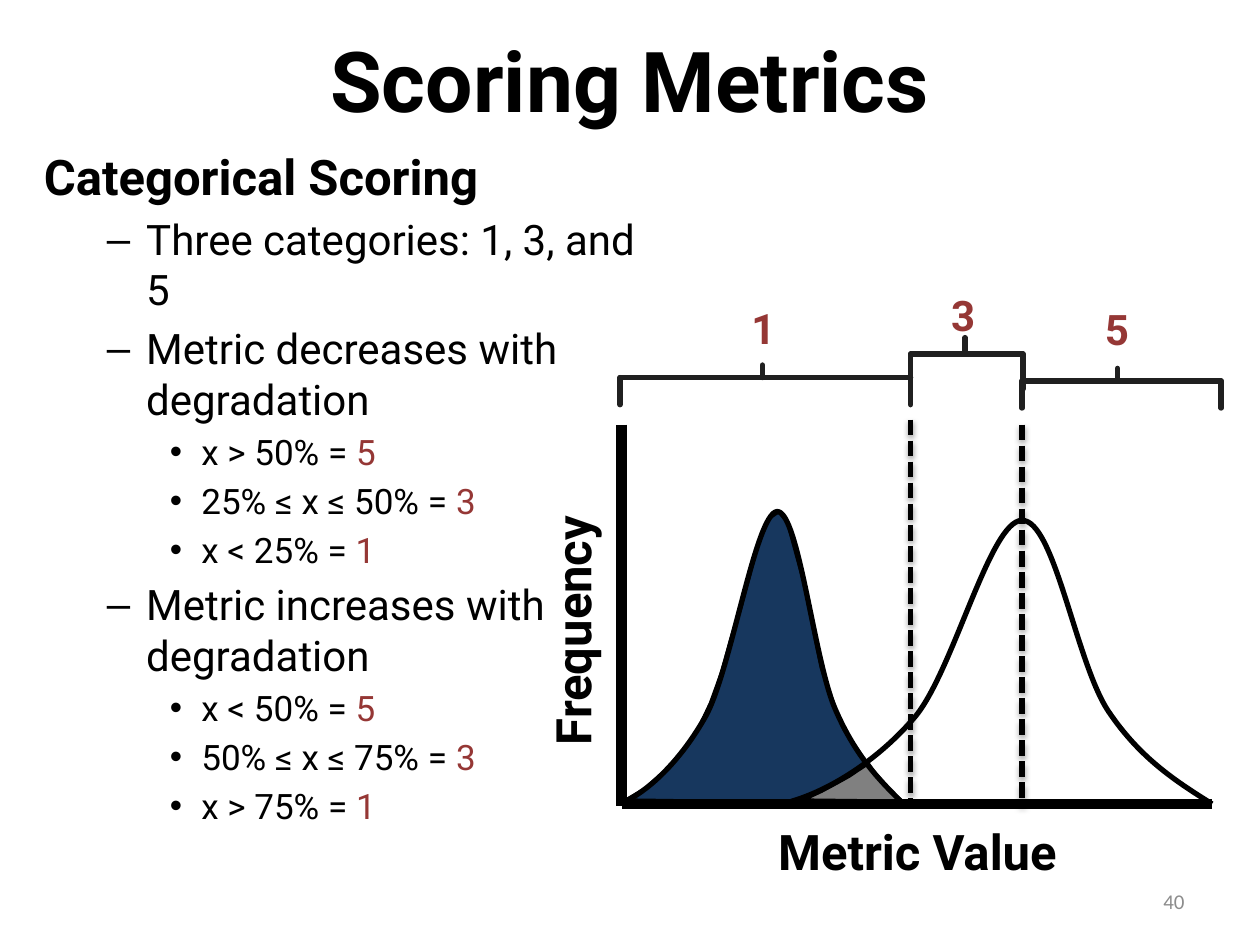
"""Build the Scoring Metrics slide with its two frequency curves."""
from dataclasses import dataclass
from typing import Optional

from lxml import etree
from pptx import Presentation
from pptx import util as u
from pptx.dml.color import RGBColor
from pptx.enum import dml, shapes, text
from pptx.oxml import ns

BLACK = RGBColor(0x00, 0x00, 0x00)
RED = RGBColor(0x95, 0x37, 0x35)
NAVY = RGBColor(0x17, 0x37, 0x5E)
GRAY = RGBColor(0x80, 0x80, 0x80)
CHARCOAL = RGBColor(0x20, 0x20, 0x20)
PALE = RGBColor(0x8C, 0x8C, 0x8C)


@dataclass
class Label:
    text: str
    left: float
    top: float
    width: float
    height: float
    size: float
    color: RGBColor = BLACK
    bold: bool = True
    font: str = "Roboto"
    align: text.PP_ALIGN = text.PP_ALIGN.CENTER
    anchor: text.MSO_ANCHOR = text.MSO_ANCHOR.TOP
    rotation: float = 0


@dataclass
class Bracket:
    left: float
    right: float
    top: float
    drop: float
    tick_x: float
    tick: float


@dataclass
class Level:
    size: float
    indent: float
    hanging: float
    bullet: str


@dataclass
class Item:
    level: int
    text: str
    score: str = ""


LEVELS = [Level(28, 0, 0, ""), Level(24, 58.5, 22.5, "–"), Level(20, 90, 18, "•")]
ITEMS = [
    Item(0, "Categorical Scoring"),
    Item(1, "Three categories: 1, 3, and 5"),
    Item(1, "Metric decreases with degradation"),
    Item(2, "x > 50% = ", "5"),
    Item(2, "25% ≤ x ≤ 50% = ", "3"),
    Item(2, "x < 25% = ", "1"),
    Item(1, "Metric increases with degradation"),
    Item(2, "x < 50% = ", "5"),
    Item(2, "50% ≤ x ≤ 75% = ", "3"),
    Item(2, "x > 75% = ", "1"),
]
LABELS = [
    Label("Scoring Metrics", 36, 0, 648, 90, 48, anchor=text.MSO_ANCHOR.MIDDLE),
    Label("Frequency", 223.2, 339.8, 207.4, 41, 28, rotation=270),
    Label("Metric Value", 355.7, 465.8, 337, 44, 28),
    Label("1", 399.6, 169.2, 73.4, 36, 24, RED),
    Label("3", 516.2, 162, 68.4, 36, 24, RED),
    Label("5", 604.1, 169.9, 68.4, 36, 24, RED),
    Label("40", 516.2, 500.4, 167.8, 28.8, 12, PALE, False, "Calibri",
          text.PP_ALIGN.RIGHT, text.MSO_ANCHOR.MIDDLE),
]
BRACKETS = [
    Bracket(354.3, 520.4, 215.8, 15.5, 435.6, 7.2),
    Bracket(584, 697.8, 217.7, 15.5, 638.6, 7.2),
    Bracket(520.4, 584.6, 202.3, 20, 551.5, 9.4),
]
LEFT_CURVE = [
    (355.7, 458.6), (369.4, 452.9), (388.8, 435.6), (403.9, 408.2),
    (418.3, 380.2), (432, 293), (444.2, 292.3),
    (456.5, 292.3), (465.1, 377.3), (477.4, 405.4),
    (489.6, 433.4), (503.3, 446.4), (517, 460.1),
]
RIGHT_CURVE = [
    (452.2, 457.9), (472.3, 452.2), (501.1, 435.6), (523.4, 409),
    (545, 382.3), (565.9, 297.4), (583.9, 297.4),
    (602.6, 296.6), (614.9, 379.4), (633.6, 406.8),
    (651.6, 433.4), (671.8, 446.4), (692.6, 459.4),
]
PEAK = [
    (357.8, 457.2), (516.2, 459.4), (511.2, 455), (501.8, 445), (492.5, 432),
    (482.4, 416.9), (477.4, 405.4), (469.4, 381.6), (464.4, 357.1), (460.1, 334.8),
    (454.3, 313.9), (450, 298.1), (445, 292.3), (439.9, 295.9), (435.6, 304.6),
    (431.3, 317.5), (427.7, 331.2), (423.4, 347), (417.6, 365.8), (412.6, 383.8),
    (406.1, 401.8), (400.3, 414), (393.8, 424.8), (380.9, 439.9), (368.6, 450.7),
]
OVERLAP = [
    (455, 457.2), (515.5, 457.9), (508.3, 451.4), (504.7, 447.1),
    (499.7, 441.4), (496.1, 436.3), (489.6, 440.6), (485.3, 443.5),
    (478.8, 447.1), (469.4, 452.2), (460.1, 456.5),
]


def draw_outline(s, points: list, width: float, fill: Optional[RGBColor] = None):
    """Draw a polyline, closed and filled when a fill is given."""
    (x, y), *rest = [(u.Pt(px), u.Pt(py)) for px, py in points]
    builder = s.shapes.build_freeform(x, y)
    builder.add_line_segments(rest, close=fill is not None)
    sp = builder.convert_to_shape()
    sp.shadow.inherit = False
    if fill is None:
        sp.fill.background()
    else:
        sp.fill.solid()
        sp.fill.fore_color.rgb = fill
    sp.line.color.rgb = BLACK
    sp.line.width = u.Pt(width)
    return sp


def draw_curve(s, points: list) -> None:
    """Draw a chain of cubic segments given by anchors and control points."""
    sp = draw_outline(s, points, 3)
    steps = list(sp._element.iter(ns.qn("a:lnTo")))
    for i in range(0, len(steps), 3):
        cubic = etree.Element(ns.qn("a:cubicBezTo"))
        steps[i].addprevious(cubic)
        for step in steps[i:i + 3]:
            cubic.append(step[0])
            step.getparent().remove(step)


def draw_line(s, x1: float, y1: float, x2: float, y2: float, color: RGBColor = CHARCOAL,
              width: float = 3, dashed: bool = False, rounded: bool = False) -> None:
    """Draw a straight line; dashed lines carry a soft shadow."""
    sp = s.shapes.add_connector(shapes.MSO_CONNECTOR.STRAIGHT,
                                u.Pt(x1), u.Pt(y1), u.Pt(x2), u.Pt(y2))
    sp.line.color.rgb = color
    sp.line.width = u.Pt(width)
    if rounded:
        sp._element.spPr.find(ns.qn("a:ln")).set("cap", "rnd")
    if dashed:
        sp.line.dash_style = dml.MSO_LINE.SQUARE_DOT
    effects = etree.SubElement(sp._element.spPr, ns.qn("a:effectLst"))
    if dashed:
        shadow = etree.SubElement(effects, ns.qn("a:outerShdw"), blurRad=str(u.Pt(3.1)),
                                  dist=str(u.Pt(1.8)), dir="5400000", rotWithShape="0")
        tint = etree.SubElement(shadow, ns.qn("a:srgbClr"), val=str(BLACK))
        etree.SubElement(tint, ns.qn("a:alpha"), val="35000")


def draw_bracket(s, b: Bracket) -> None:
    """Draw a bracket with a tick pointing at its score."""
    draw_line(s, b.left, b.top, b.right, b.top, rounded=True)
    for x in (b.left, b.right):
        draw_line(s, x, b.top, x, b.top + b.drop, rounded=True)
    draw_line(s, b.tick_x, b.top - b.tick, b.tick_x, b.top, rounded=True)


def format_run(r, size: float, color: RGBColor, bold: bool, font: str = "Roboto") -> None:
    """Apply font settings to a run."""
    r.font.name, r.font.size, r.font.bold = font, u.Pt(size), bold
    r.font.color.rgb = color


def add_box(s, left: float, top: float, width: float, height: float):
    """Add a wrapping text box."""
    sp = s.shapes.add_textbox(u.Pt(left), u.Pt(top), u.Pt(width), u.Pt(height))
    sp.text_frame.word_wrap = True
    return sp


def draw_label(s, label: Label) -> None:
    """Draw one single-line label."""
    sp = add_box(s, label.left, label.top, label.width, label.height)
    sp.rotation = label.rotation
    tf = sp.text_frame
    tf.vertical_anchor = label.anchor
    p = tf.paragraphs[0]
    p.text = label.text
    p.alignment = label.align
    format_run(p.runs[0], label.size, label.color, label.bold, label.font)


def draw_items(s, items: list) -> None:
    """Draw the bulleted list of scoring rules."""
    tf = add_box(s, 18, 80, 367.2, 450).text_frame
    for i, item in enumerate(items):
        level = LEVELS[item.level]
        p = tf.paragraphs[0] if i == 0 else tf.add_paragraph()
        p.text = item.text
        p.level = item.level
        p.space_before = u.Pt(level.size * 0.2)
        format_run(p.runs[0], level.size, BLACK, item.level == 0)
        if item.score:
            r = p.add_run()
            r.text = item.score
            format_run(r, level.size, RED, False)
        if level.bullet:
            props = p._p.get_or_add_pPr()
            props.set("marL", str(u.Pt(level.indent)))
            props.set("indent", str(-u.Pt(level.hanging)))
            etree.SubElement(props, ns.qn("a:buFont"), typeface="Arial")
            etree.SubElement(props, ns.qn("a:buChar"), char=level.bullet)


def main() -> None:
    """Assemble and save the slide."""
    prs = Presentation()
    prs.slide_width, prs.slide_height = u.Pt(720), u.Pt(540)
    s = prs.slides.add_slide(prs.slide_layouts[6])
    draw_items(s, ITEMS)
    draw_outline(s, PEAK, 2, NAVY)
    draw_outline(s, OVERLAP, 2, GRAY)
    draw_line(s, 355.2, 242.6, 355.2, 460.8, BLACK, 6)
    draw_line(s, 692.6, 459.4, 355.2, 459.4, BLACK, 6)
    for curve in (LEFT_CURVE, RIGHT_CURVE):
        draw_curve(s, curve)
    for x, top, bottom in ((520.4, 239.8, 457.2), (584, 242.6, 460.1)):
        draw_line(s, x, top, x, bottom, BLACK, dashed=True)
    for bracket in BRACKETS:
        draw_bracket(s, bracket)
    for label in LABELS:
        draw_label(s, label)
    prs.save("out.pptx")


if __name__ == "__main__":
    main()
